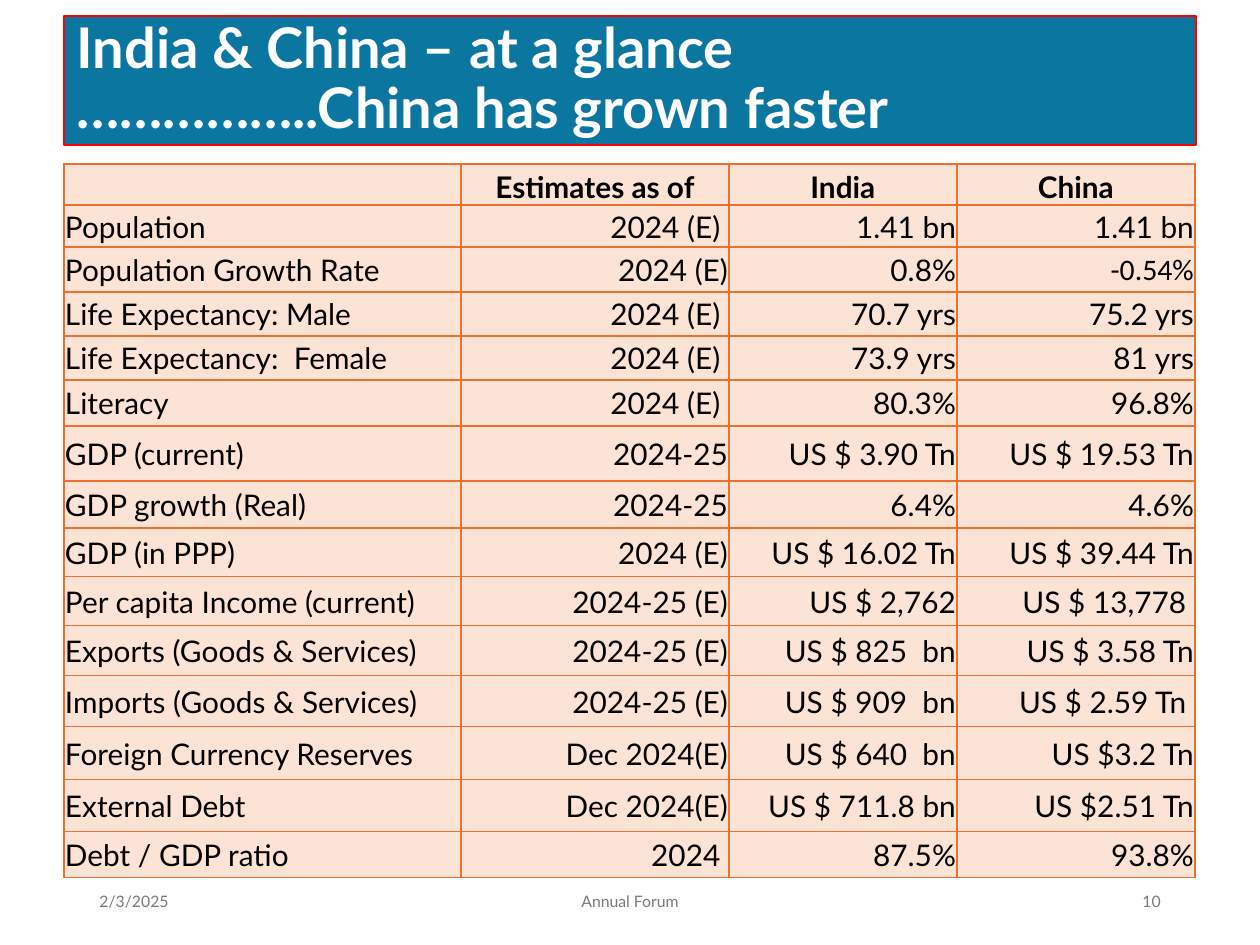
"""Build the India and China comparison slide."""
from lxml.etree import SubElement
from pptx import Presentation
from pptx.dml.color import RGBColor
from pptx.enum.text import MSO_ANCHOR, PP_ALIGN
from pptx.oxml.ns import qn
from pptx.util import Emu, Pt

COLOURS = {"banner": "0B76A0", "outline": "FF0000", "white": "FFFFFF", "cell": "FBE3D6",
           "border": "E97132", "text": "000000", "footer": "797979"}
COLUMN_WIDTHS = [397, 268, 228, 238]
ROW_HEIGHTS = [41, 42, 45, 44, 44, 46, 55, 47, 49, 49, 50, 51, 53, 52, 46]
INDICATORS = [
    ("", "Estimates as of", "India", "China"),
    ("Population", "2024 (E) ", "1.41 bn", "1.41 bn"),
    ("Population Growth Rate", "2024 (E)", "0.8%", "-0.54%"),
    ("Life Expectancy: Male", "2024 (E) ", "70.7 yrs", "75.2 yrs"),
    ("Life Expectancy:  Female", "2024 (E) ", "73.9 yrs", "81 yrs"),
    ("Literacy", "2024 (E) ", "80.3%", "96.8%"),
    ("GDP (current)", "2024-25", "US $ 3.90 Tn", "US $ 19.53 Tn"),
    ("GDP growth (Real)", "2024-25", "6.4%", "4.6%"),
    ("GDP (in PPP)", "2024 (E)", "US $ 16.02 Tn", "US $ 39.44 Tn"),
    ("Per capita Income (current)", "2024-25 (E)", "US $ 2,762", "US $ 13,778 "),
    ("Exports (Goods & Services)", "2024-25 (E)", "US $ 825  bn", "US $ 3.58 Tn"),
    ("Imports (Goods & Services)", "2024-25 (E)", "US $ 909  bn", "US $ 2.59 Tn "),
    ("Foreign Currency Reserves", "Dec 2024(E)", "US $ 640  bn", "US $3.2 Tn"),
    ("External Debt", "Dec 2024(E)", "US $ 711.8 bn", "US $2.51 Tn"),
    ("Debt / GDP ratio", " 2024 ", "87.5%", "93.8%"),
]


def px(count):
    return Emu(round(count * 914400 / 126))


def add_run(paragraph, text, size, colour, bold=False, font="Lato"):
    run = paragraph.add_run()
    run.text = text
    run.font.name = font
    run.font.size = Pt(size)
    run.font.bold = bold
    run.font.color.rgb = RGBColor.from_string(COLOURS[colour])


deck = Presentation()
deck.slide_width, deck.slide_height = px(1260), px(945)
slide = deck.slides.add_slide(deck.slide_layouts[5])

headline = slide.shapes.title
headline.left, headline.top, headline.width, headline.height = px(64), px(16), px(1132), px(129)
headline.fill.solid()
headline.fill.fore_color.rgb = RGBColor.from_string(COLOURS["banner"])
headline.line.color.rgb = RGBColor.from_string(COLOURS["outline"])
headline.line.width = Pt(0.75)
headline.text_frame.vertical_anchor = MSO_ANCHOR.MIDDLE
headline_paragraph = headline.text_frame.paragraphs[0]
headline_paragraph.alignment = PP_ALIGN.LEFT
headline_paragraph.line_spacing = 0.9
add_run(headline_paragraph, "India & China – at a glance", 32, "white", True)
headline_paragraph.add_line_break()
add_run(headline_paragraph, "……………..China has grown faster", 32, "white", True)

comparison = slide.shapes.add_table(len(ROW_HEIGHTS), len(COLUMN_WIDTHS), px(64), px(164),
                                    px(sum(COLUMN_WIDTHS)), px(sum(ROW_HEIGHTS))).table
comparison.horz_banding = False
for column, width in zip(comparison.columns, COLUMN_WIDTHS):
    column.width = px(width)
for row, height in zip(comparison.rows, ROW_HEIGHTS):
    row.height = px(height)

for row_index, values in enumerate(INDICATORS):
    is_header = row_index == 0
    for column_index, value in enumerate(values):
        cell = comparison.cell(row_index, column_index)
        cell.margin_left = cell.margin_right = cell.margin_top = px(1)
        cell.margin_bottom = 0
        cell.vertical_anchor = MSO_ANCHOR.BOTTOM if is_header else MSO_ANCHOR.MIDDLE
        for edge in ("a:lnL", "a:lnR", "a:lnT", "a:lnB"):
            border = SubElement(cell._tc.get_or_add_tcPr(), qn(edge), w=str(Pt(1)))
            SubElement(SubElement(border, qn("a:solidFill")), qn("a:srgbClr"),
                       val=COLOURS["border"])
        cell.fill.solid()
        cell.fill.fore_color.rgb = RGBColor.from_string(COLOURS["cell"])
        if value:
            entry = cell.text_frame.paragraphs[0]
            if is_header:
                entry.alignment = PP_ALIGN.CENTER
            else:
                entry.alignment = PP_ALIGN.RIGHT if column_index else PP_ALIGN.LEFT
            add_run(entry, value, 17, "text", is_header,
                    "Calibri" if value == "-0.54%" else "Lato")

for text, left, width, alignment in (("2/3/2025", 87, 284, PP_ALIGN.LEFT),
                                     ("Annual Forum", 417, 426, PP_ALIGN.CENTER),
                                     ("10", 889, 284, PP_ALIGN.RIGHT)):
    footer = slide.shapes.add_textbox(px(left), px(876), px(width), px(50)).text_frame
    footer.word_wrap = True
    footer.vertical_anchor = MSO_ANCHOR.MIDDLE
    footer.paragraphs[0].alignment = alignment
    add_run(footer.paragraphs[0], text, 9, "footer")

deck.save("out.pptx")
